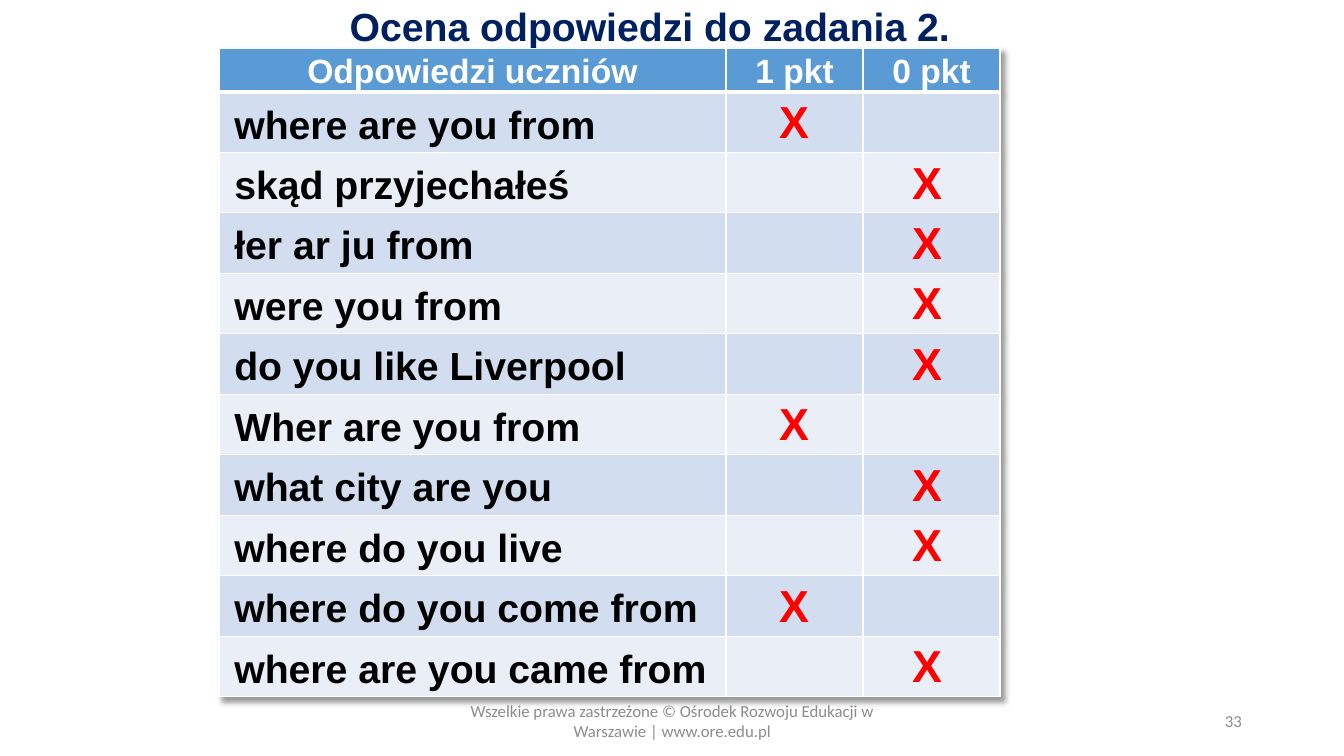
from typing import NamedTuple

from lxml.etree import SubElement
from pptx import Presentation
from pptx.dml.color import RGBColor
from pptx.enum.text import MSO_ANCHOR, MSO_AUTO_SIZE, PP_ALIGN
from pptx.oxml import parse_xml
from pptx.oxml.ns import nsdecls, qn
from pptx.util import Pt

LEFT, MID, RIGHT = PP_ALIGN.LEFT, PP_ALIGN.CENTER, PP_ALIGN.RIGHT
CENTRE, TOP = MSO_ANCHOR.MIDDLE, MSO_ANCHOR.TOP
FIXED = MSO_AUTO_SIZE.NONE

HUES = {
    "navy": "002060", "grey": "8C8C8C", "white": "FFFFFF", "black": "000000",
    "red": "FF0000", "head": "5B9BD5", "dark": "D2DEEF", "light": "EAEFF7",
}


class Box(NamedTuple):
    left: float
    top: float
    width: float
    height: float


class Answer(NamedTuple):
    text: str
    point: bool


class Note(NamedTuple):
    text: str
    box: Box
    align: PP_ALIGN


ANSWERS = [
    Answer("where are you from", True),
    Answer("skąd przyjechałeś", False),
    Answer("łer ar ju from", False),
    Answer("were you from", False),
    Answer("do you like Liverpool", False),
    Answer("Wher are you from", True),
    Answer("what city are you", False),
    Answer("where do you live", False),
    Answer("where do you come from", True),
    Answer("where are you came from", False),
]
NOTES = [
    Note("Wszelkie prawa zastrzeżone © Ośrodek Rozwoju Edukacji w Warszawie | www.ore.edu.pl",
         Box(318.25, 500.5, 324, 28.75), MID),
    Note("33", Box(678.25, 500.5, 216, 28.75), RIGHT),
]
HEADS = ["Odpowiedzi uczniów", "1 pkt", "0 pkt"]
WIDTHS = [362.2, 97.9, 97.9]
GRID = Box(156.4, 34.8, sum(WIDTHS), 458)
HEAD_ROW, ROW = 26, 43.2
MARK = Box(549.4, 63.4, 33.8, 46)
STEP = 95


def write(frame, text: str, *, size: float, hue: str, font: str = "Arial",
          bold: bool = True, align: PP_ALIGN = LEFT, space: float = 1.0,
          indent: float = 0) -> None:
    line = frame.paragraphs[0]
    line.alignment = align
    line.line_spacing = space
    if indent:
        line._p.get_or_add_pPr().set("marL", str(Pt(indent)))
    run = line.add_run()
    run.text = text
    run.font.name = font
    run.font.size = Pt(size)
    run.font.bold = bold
    run.font.color.rgb = RGBColor.from_string(HUES[hue])


def add_text(slide, box: Box, text: str, *, wrap: bool = True,
             anchor: MSO_ANCHOR = CENTRE, **form) -> None:
    frame = slide.shapes.add_textbox(*map(Pt, box)).text_frame
    frame.word_wrap = wrap
    frame.vertical_anchor = anchor
    write(frame, text, **form)


def paint(cell, hue: str, base: float) -> None:
    props = cell._tc.get_or_add_tcPr()
    for side, width in {"L": 1, "R": 1, "T": 1, "B": base}.items():
        edge = SubElement(props, qn(f"a:ln{side}"), w=str(Pt(width)))
        fill = SubElement(edge, qn("a:solidFill"))
        SubElement(fill, qn("a:srgbClr"), val=HUES["white"])
    cell.fill.solid()
    cell.fill.fore_color.rgb = RGBColor.from_string(HUES[hue])
    cell.vertical_anchor = CENTRE
    cell.margin_left = cell.margin_right = Pt(5)
    cell.margin_top = cell.margin_bottom = 0


def add_grid(slide) -> None:
    table = slide.shapes.add_table(len(ANSWERS) + 1, len(HEADS), *map(Pt, GRID)).table
    table._tbl.tblPr.insert(0, parse_xml(
        f'<a:effectLst {nsdecls("a")}><a:outerShdw blurRad="{Pt(4)}" dist="{Pt(4)}" '
        'dir="2700000" algn="tl" rotWithShape="0"><a:srgbClr val="000000">'
        '<a:alpha val="40000"/></a:srgbClr></a:outerShdw></a:effectLst>'))
    for col, width in zip(table.columns, WIDTHS):
        col.width = Pt(width)
    for i, row in enumerate(table.rows):
        row.height = Pt(ROW if i else HEAD_ROW)
        hue = ("light", "dark")[i % 2] if i else "head"
        for cell in row.cells:
            paint(cell, hue, 1 if i else 3)
    for j, head in enumerate(HEADS):
        write(table.cell(0, j).text_frame, head, size=24, hue="white",
              align=MID, space=1.07)
    for i, answer in enumerate(ANSWERS, 1):
        write(table.cell(i, 0).text_frame, answer.text, size=28, hue="black",
              space=1.15, indent=6)


def add_marks(slide) -> None:
    for i, answer in enumerate(ANSWERS):
        left = MARK.left if answer.point else MARK.left + STEP
        box = MARK._replace(left=left, top=MARK.top + i * ROW)
        add_text(slide, box, "X", wrap=False, anchor=TOP, size=32, hue="red")


def main() -> None:
    deck = Presentation()
    deck.slide_width, deck.slide_height = Pt(960), Pt(540)
    slide = deck.slides.add_slide(deck.slide_layouts[5])
    title = slide.shapes.title
    title.left, title.top, title.width, title.height = map(Pt, Box(242.6, 0, 458, 41.8))
    title.text_frame.auto_size = FIXED
    title.text_frame.vertical_anchor = CENTRE
    write(title.text_frame, "Ocena odpowiedzi do zadania 2.", size=28, hue="navy", space=0.9)
    for note in NOTES:
        add_text(slide, note.box, note.text, size=12, hue="grey", font="Calibri",
                 bold=False, align=note.align)
    add_grid(slide)
    add_marks(slide)
    deck.save("out.pptx")


if __name__ == "__main__":
    main()
